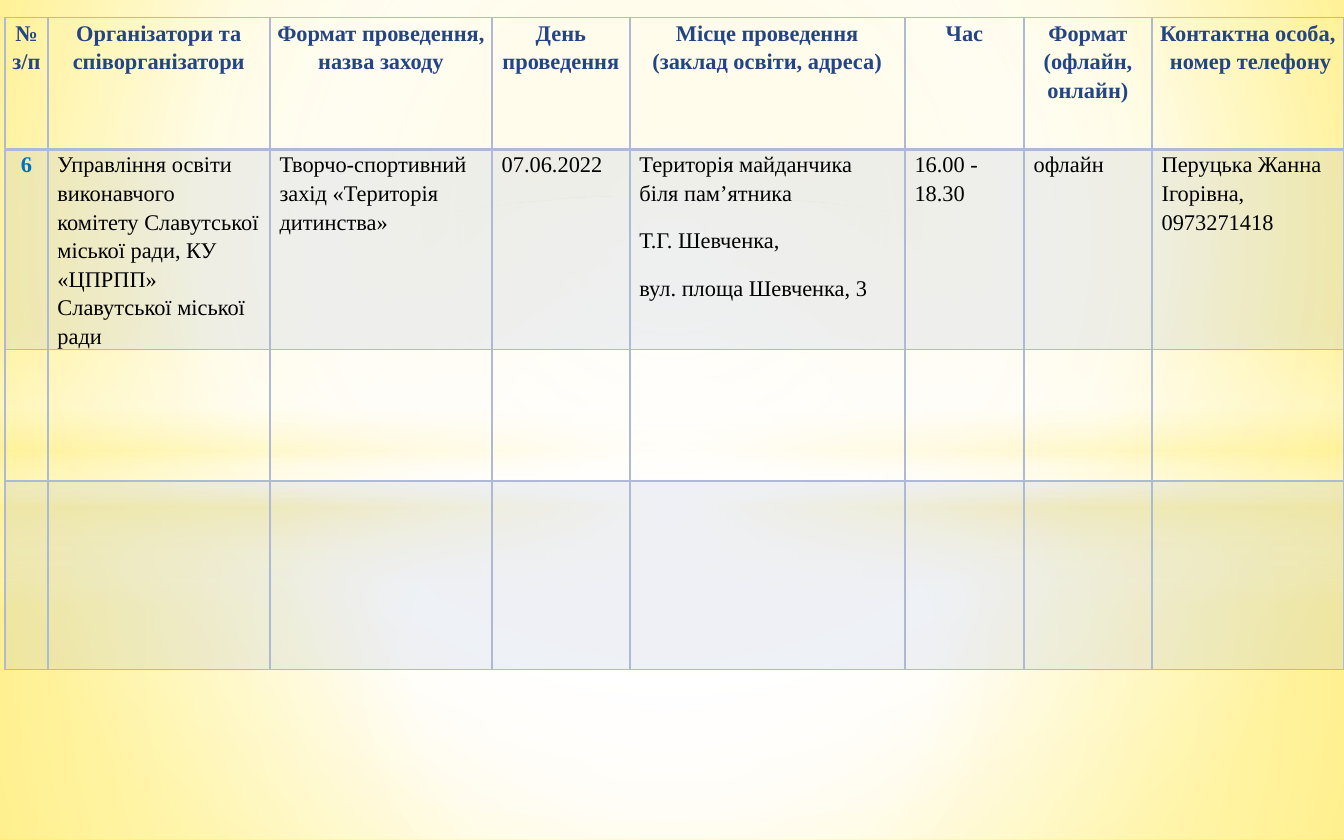
"""Build a one-slide event schedule table on a soft yellow background."""
from typing import NamedTuple, Optional

from pptx import Presentation
from pptx.dml.color import RGBColor
from pptx.enum.shapes import MSO_SHAPE
from pptx.enum.text import PP_ALIGN
from pptx.oxml import parse_xml
from pptx.oxml.ns import nsdecls, qn
from pptx.util import Pt

YELLOW, WHITE, GRID = "FFF39D", "FFFFFF", "AEBAD5"


class Stop(NamedTuple):
    pos: int
    tone: str
    alpha: int = 100


class Glow(NamedTuple):
    kind: int
    top: float
    high: float
    stops: list
    focus: Optional[tuple] = (50, 50, 50, 50)


class Style(NamedTuple):
    font: dict
    para: dict
    tone: str
    inset: float


def rgb(tone: str) -> RGBColor:
    return RGBColor.from_string(tone)


def ink(tone: str, alpha: int = 100) -> str:
    return f'<a:srgbClr val="{tone}"><a:alpha val="{alpha * 1000}"/></a:srgbClr>'


def blend(stops: list, focus: Optional[tuple]) -> str:
    marks = "".join(f'<a:gs pos="{s.pos * 1000}">{ink(s.tone, s.alpha)}</a:gs>' for s in stops)
    if focus:
        sides = " ".join(f'{k}="{v * 1000}"' for k, v in zip("ltrb", focus))
        route = f'<a:path path="circle"><a:fillToRect {sides}/></a:path>'
    else:
        route = '<a:lin ang="5400000" scaled="0"/>'
    return f'<a:gradFill {nsdecls("a")} rotWithShape="1"><a:gsLst>{marks}</a:gsLst>{route}</a:gradFill>'


def paint(host, fill: str) -> None:
    host.replace(host.find(qn("a:solidFill")), parse_xml(fill))


def draw_glow(slide, glow: Glow) -> None:
    shape = slide.shapes.add_shape(glow.kind, 0, Pt(glow.top), Pt(720), Pt(glow.high))
    shape.shadow.inherit = False
    shape.line.fill.background()
    shape.fill.solid()
    paint(shape.element.spPr, blend(glow.stops, glow.focus))


def frame(cell, tint: bool, base: int) -> None:
    cell.fill.background()
    if tint:
        cell.fill.solid()
    props = cell._tc.get_or_add_tcPr()
    if tint:
        paint(props, f'<a:solidFill {nsdecls("a")}>{ink(GRID, 20)}</a:solidFill>')
    for spot, (side, wide) in enumerate(zip("LRTB", (1, 1, 1, base))):
        props.insert(spot, parse_xml(
            f'<a:ln{side} {nsdecls("a")} w="{Pt(wide)}"><a:solidFill>{ink(GRID)}'
            f'</a:solidFill></a:ln{side}>'))


def write(cell, text: str, style: Style) -> None:
    edges = {"margin_left": Pt(style.inset), "margin_right": Pt(style.inset),
             "margin_top": 0, "margin_bottom": 0}
    for name, value in edges.items():
        setattr(cell, name, value)
    cell.text = text
    for para in cell.text_frame.paragraphs:
        for name, value in style.para.items():
            setattr(para, name, value)
        for run in para.runs:
            for name, value in style.font.items():
                setattr(run.font, name, value)
            run.font.color.rgb = rgb(style.tone)


FACE = {"name": "Times New Roman", "size": Pt(12)}
BOLD, PLAIN = {**FACE, "bold": True}, {**FACE, "bold": False}
MID = {"alignment": PP_ALIGN.CENTER, "line_spacing": 1.15}
LEFT = {"alignment": PP_ALIGN.LEFT, "line_spacing": 1.15, "space_after": Pt(10)}
HEAD = Style(BOLD, MID, "244583", 3.5)
COUNT = Style(BOLD, MID, "0070C0", 3.5)
BODY = Style(PLAIN, LEFT, "000000", 5.2)

GLOWS = [
    Glow(MSO_SHAPE.RECTANGLE, 253.4, 196.6,
         [Stop(0, WHITE, 91), Stop(37, WHITE, 76), Stop(100, YELLOW, 79)]),
    Glow(MSO_SHAPE.RECTANGLE, 0, 253.4,
         [Stop(0, WHITE, 89), Stop(48, WHITE, 62), Stop(100, YELLOW, 79)]),
    Glow(MSO_SHAPE.RECTANGLE, 174.2, 149.8,
         [Stop(0, WHITE, 0), Stop(29, WHITE, 30), Stop(45, YELLOW, 40),
          Stop(55, WHITE, 26), Stop(65, YELLOW, 60), Stop(100, WHITE, 0)], None),
    Glow(MSO_SHAPE.OVAL, 105.1, 334.8, [Stop(0, WHITE), Stop(54, WHITE, 0)]),
]
WIDTHS = [22.8, 119, 119, 73.8, 147.4, 63.8, 68.6, 102.8]
HEIGHTS = [70.6, 76.3, 70.6, 100.8]
TITLES = ["№\nз/п", "Організатори та співорганізатори", "Формат проведення, назва заходу",
          "День проведення", "Місце проведення\n(заклад освіти, адреса)", "Час",
          "Формат\n(офлайн, онлайн)", "Контактна особа,\n номер телефону"]
EVENT = ["6", "Управління освіти виконавчого комітету Славутської міської ради, "
         "КУ «ЦПРПП» Славутської міської ради",
         "Творчо-спортивний захід «Територія дитинства»", "07.06.2022",
         "Територія майданчика біля пам’ятника\nТ.Г. Шевченка,\nвул. площа Шевченка, 3",
         "16.00 - 18.30", "офлайн", "Перуцька Жанна Ігорівна, 0973271418"]


def draw_table(slide) -> None:
    table = slide.shapes.add_table(len(HEIGHTS), len(WIDTHS), Pt(2.8), Pt(9.4),
                                   Pt(sum(WIDTHS)), Pt(sum(HEIGHTS))).table
    table.first_row = table.horz_banding = False
    for col, wide in zip(table.columns, WIDTHS):
        col.width = Pt(wide)
    for place, (row, high) in enumerate(zip(table.rows, HEIGHTS)):
        row.height = Pt(high)
        for cell in row.cells:
            frame(cell, place % 2 == 1, 1 if place else 2)
    for spot, (title, fact) in enumerate(zip(TITLES, EVENT)):
        write(table.cell(0, spot), title, HEAD)
        write(table.cell(1, spot), fact, BODY if spot else COUNT)


def main() -> None:
    deck = Presentation()
    deck.slide_width, deck.slide_height = Pt(720), Pt(450)
    slide = deck.slides.add_slide(deck.slide_layouts[6])
    slide.background.fill.solid()
    paint(slide.element.find(".//" + qn("p:bgPr")),
          blend([Stop(0, "FFF18D"), Stop(60, WHITE), Stop(100, "FFE94E")], (20, 10, 20, 60)))
    for glow in GLOWS:
        draw_glow(slide, glow)
    draw_table(slide)
    deck.save("out.pptx")


if __name__ == "__main__":
    main()
